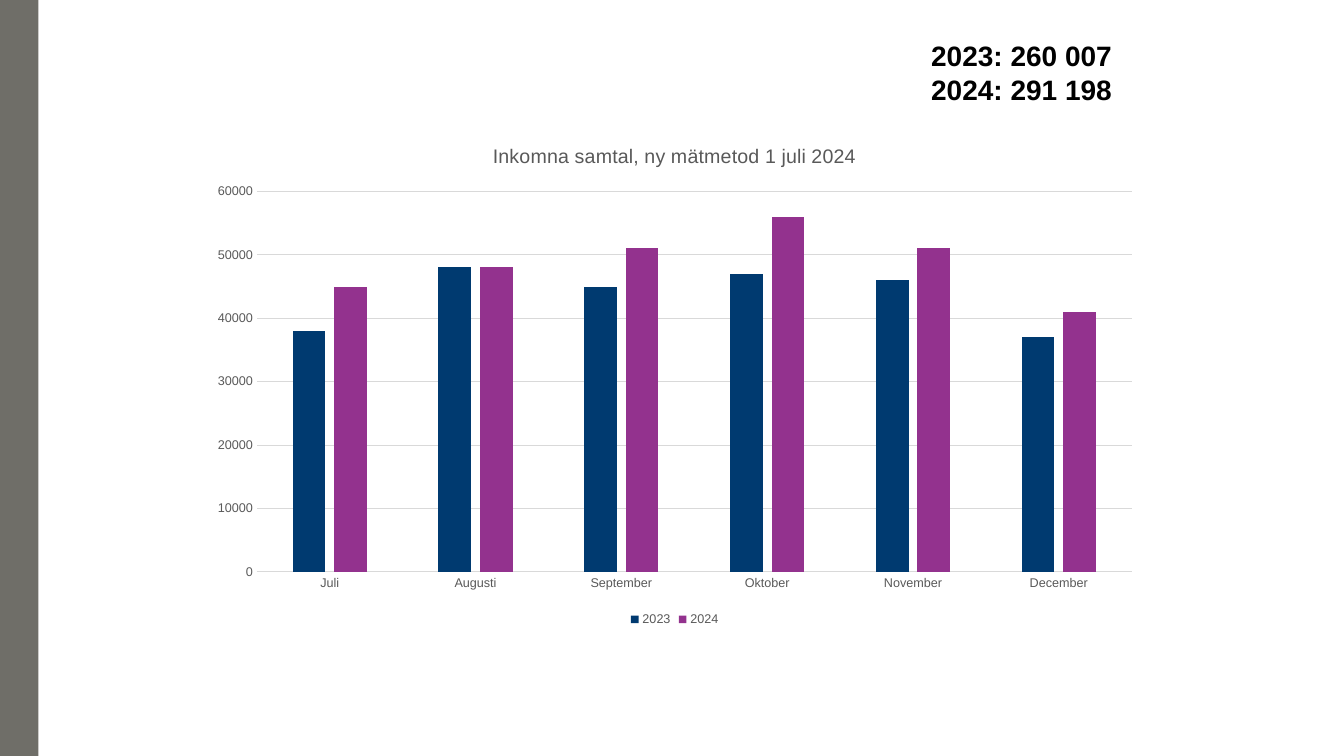
from pptx import Presentation
from pptx.chart.data import CategoryChartData
from pptx.dml.color import RGBColor
from pptx.enum.chart import XL_CHART_TYPE, XL_LEGEND_POSITION, XL_TICK_MARK
from pptx.enum.shapes import MSO_SHAPE
from pptx.util import Pt

COLUMNS = XL_CHART_TYPE.COLUMN_CLUSTERED
BOTTOM = XL_LEGEND_POSITION.BOTTOM
NO_TICK = XL_TICK_MARK.NONE
RECTANGLE = MSO_SHAPE.RECTANGLE

TOTALS = ["2023: 260 007", "2024: 291 198"]
CHART_TITLE = "Inkomna samtal, ny mätmetod 1 juli 2024"
MONTHS = ["Juli", "Augusti", "September", "Oktober", "November", "December"]
CALLS = {
    "2023": [38000, 48000, 45000, 47000, 46000, 37000],
    "2024": [45000, 48000, 51000, 56000, 51000, 41000],
}


class Theme:
    font = "Arial"
    black = RGBColor.from_string("000000")
    white = RGBColor.from_string("FFFFFF")
    grey = RGBColor.from_string("595959")
    grid = RGBColor.from_string("D9D9D9")
    band = RGBColor.from_string("6F6E68")
    series = [RGBColor.from_string("003A70"), RGBColor.from_string("93328E")]
    totals_size = 20
    title_size = 14
    label_size = 9


PAGE_SIZE = (960, 540)
BAND_WIDTH = 27.5
CHART_BOX = (142, 89, 680, 361.5)
TOTALS_BOX = (658, 24, 245, 55.5)


def points(values):
    return [Pt(value) for value in values]


def style_font(font, size, color, bold=False):
    font.name = Theme.font
    font.size = Pt(size)
    font.bold = bold
    font.color.rgb = color


def write(frame, text, size, color, bold=False, first=True):
    para = frame.paragraphs[0] if first else frame.add_paragraph()
    span = para.add_run()
    span.text = text
    style_font(span.font, size, color, bold)


def style_line(line):
    line.color.rgb = Theme.grid
    line.width = Pt(0.75)


def add_band(page):
    band = page.shapes.add_shape(RECTANGLE, *points((0, 0, BAND_WIDTH, PAGE_SIZE[1])))
    band.shadow.inherit = False
    band.fill.solid()
    band.fill.fore_color.rgb = Theme.band
    band.line.fill.background()


def add_calls_chart(page):
    data = CategoryChartData()
    data.categories = MONTHS
    for year, calls in CALLS.items():
        data.add_series(year, calls)
    chart = page.shapes.add_chart(COLUMNS, *points(CHART_BOX), data).chart
    style_font(chart.font, Theme.label_size, Theme.grey)

    chart.has_title = True
    write(chart.chart_title.text_frame, CHART_TITLE, Theme.title_size, Theme.grey)
    chart.chart_title.include_in_layout = False
    chart.has_legend = True
    chart.legend.position = BOTTOM
    chart.legend.include_in_layout = False
    style_font(chart.legend.font, Theme.label_size, Theme.grey)

    for axis in (chart.category_axis, chart.value_axis):
        axis.major_tick_mark = NO_TICK
        axis.minor_tick_mark = NO_TICK
        style_font(axis.tick_labels.font, Theme.label_size, Theme.grey)
    style_line(chart.category_axis.format.line)
    chart.value_axis.format.line.fill.background()
    style_line(chart.value_axis.major_gridlines.format.line)
    chart.value_axis.minimum_scale = 0
    chart.value_axis.maximum_scale = 60000
    chart.value_axis.major_unit = 10000

    plot = chart.plots[0]
    plot.vary_by_categories = False
    plot.gap_width = 219
    plot.overlap = -27
    for series, color in zip(plot.series, Theme.series):
        series.format.fill.solid()
        series.format.fill.fore_color.rgb = color


def add_totals(page):
    box = page.shapes.add_textbox(*points(TOTALS_BOX))
    box.text_frame.word_wrap = True
    for index, total in enumerate(TOTALS):
        write(box.text_frame, total, Theme.totals_size, Theme.black,
              bold=True, first=index == 0)


def main():
    deck = Presentation()
    deck.slide_width, deck.slide_height = points(PAGE_SIZE)
    page = deck.slides.add_slide(deck.slide_layouts[6])
    page.background.fill.solid()
    page.background.fill.fore_color.rgb = Theme.white
    add_band(page)
    add_calls_chart(page)
    add_totals(page)
    deck.save("out.pptx")


if __name__ == "__main__":
    main()
